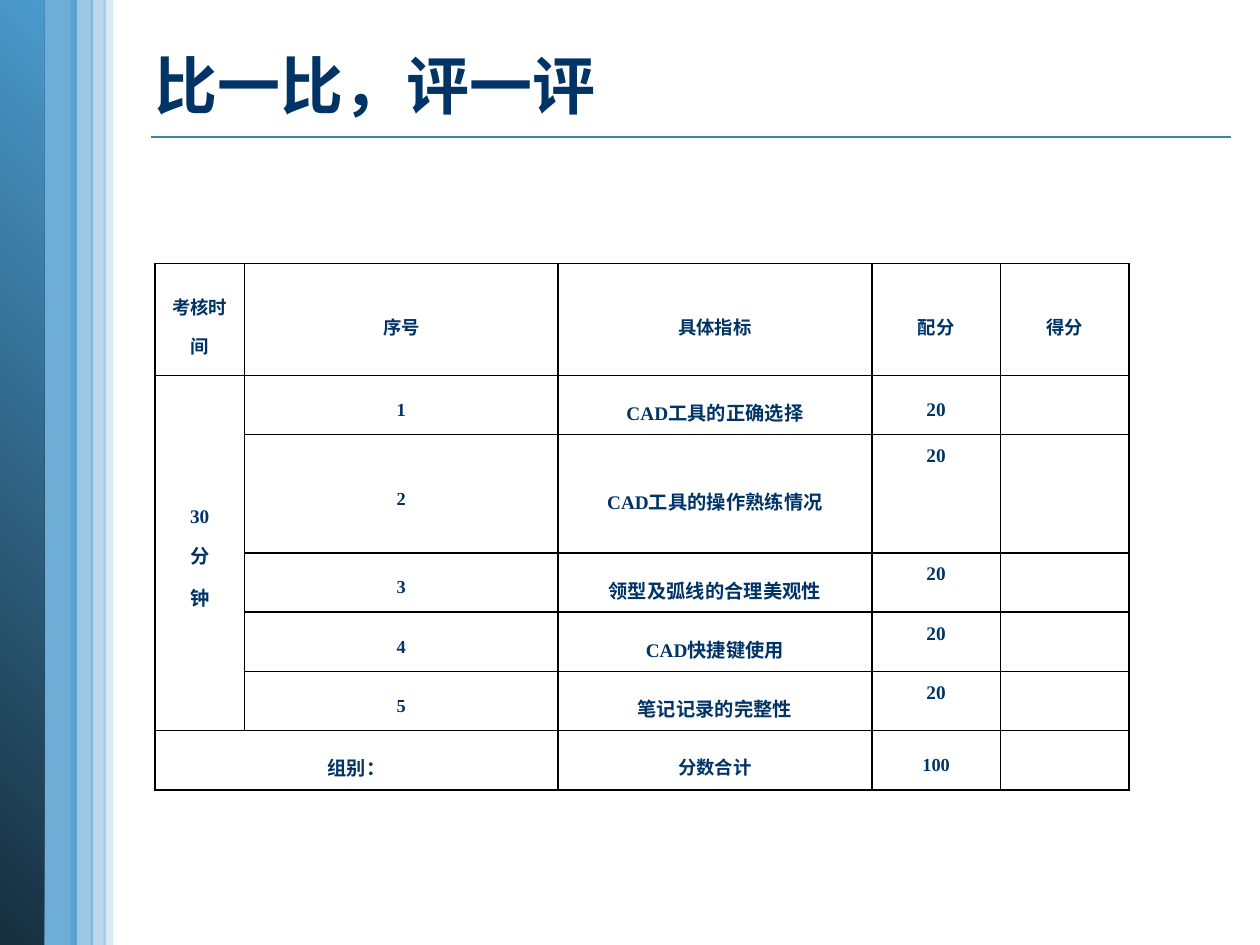
from dataclasses import dataclass
from lxml.etree import SubElement
from pptx import Presentation
from pptx.dml.color import RGBColor
from pptx.enum.shapes import MSO_CONNECTOR, MSO_SHAPE
from pptx.enum.text import MSO_ANCHOR, PP_ALIGN
from pptx.oxml.ns import qn
from pptx.util import Inches, Pt


@dataclass(frozen=True)
class Theme:
    ink: str = "003366"
    sky: str = "4A9ACC"
    deep: str = "162E3D"
    rule: str = "4582A7"
    grid: str = "000000"
    paper: str = "FFFFFF"
    head: float = 36
    body: float = 11
    small: float = 10.5
    sans: str = "Arial"
    serif: str = "Times New Roman"


THEME = Theme()

# Left, width and opacity of the stripes
BACK = [(0.3, 0.31, 80)]
FRONT = [(0.82, 0.08, 20), (0.56, 0.18, 54), (0.72, 0.12, 37)]

COLS = [0.71, 2.49, 2.49, 1.02, 1.02]
ROWS = [0.89, 0.47, 0.94, 0.47, 0.47, 0.47, 0.47]
HEADS = ["考核时间", "序号", "具体指标", "配分", "得分"]
GOALS = ["CAD工具的正确选择", "CAD工具的操作熟练情况", "领型及弧线的合理美观性",
         "CAD快捷键使用", "笔记记录的完整性"]


def rgb(code):
    return RGBColor.from_string(code)


def apply(item, form):
    for key, value in form.items():
        setattr(item, key, value)


def style(para, size, face):
    apply(para.font, {"size": Pt(size), "name": face, "bold": True})
    para.font.color.rgb = rgb(THEME.ink)


def add_bar(slide, left, width):
    bar = slide.shapes.add_shape(MSO_SHAPE.RECTANGLE, Inches(left), 0,
                                 Inches(width), Inches(7.5))
    bar.shadow.inherit = False
    bar.line.fill.background()
    return bar


def add_stripe(slide, left, width, alpha):
    bar = add_bar(slide, left, width)
    bar.fill.solid()
    bar.fill.fore_color.rgb = rgb(THEME.sky)
    tint = bar.fill._xPr.find(qn("a:solidFill"))[0]
    SubElement(tint, qn("a:alpha"), val=str(alpha * 1000))


def add_fade(slide):
    bar = add_bar(slide, 0, 0.35)
    bar.fill.gradient()
    bar.fill.gradient_angle = 45
    for stop, code in zip(bar.fill.gradient_stops, (THEME.deep, THEME.sky)):
        stop.color.rgb = rgb(code)


def add_rule(slide):
    line = slide.shapes.add_connector(MSO_CONNECTOR.STRAIGHT, Inches(1.2),
                                      Inches(1.09), Inches(9.77), Inches(1.09))
    line.line.color.rgb = rgb(THEME.rule)
    line.line.width = Pt(1)
    SubElement(line._element.spPr, qn("a:effectLst"))


def add_title(slide, text):
    box = slide.shapes.add_textbox(Inches(1.13), Inches(0.37),
                                   Inches(8.7), Inches(1.11))
    frame = box.text_frame
    apply(frame, {"word_wrap": True, "margin_top": 0, "text": text,
                  "vertical_anchor": MSO_ANCHOR.TOP})
    style(frame.paragraphs[0], THEME.head, THEME.sans)


def add_edges(cell):
    props = cell._tc.get_or_add_tcPr()
    for side in ("lnL", "lnR", "lnT", "lnB"):
        edge = SubElement(props, qn(f"a:{side}"), w=str(Pt(1)))
        fill = SubElement(edge, qn("a:solidFill"))
        SubElement(fill, qn("a:srgbClr"), val=THEME.grid)


def fill_cell(cell, text, size, anchor):
    apply(cell, {"margin_left": Inches(0.07), "margin_right": Inches(0.07),
                 "margin_top": 0, "margin_bottom": 0,
                 "vertical_anchor": anchor})
    cell.text_frame.text = text
    for para in cell.text_frame.paragraphs:
        apply(para, {"alignment": PP_ALIGN.CENTER, "line_spacing": 1.5})
        style(para, size, THEME.serif)


def add_table(slide):
    shape = slide.shapes.add_table(len(ROWS), len(COLS), Inches(1.23),
                                   Inches(2.09), Inches(sum(COLS)),
                                   Inches(sum(ROWS)))
    table = shape.table
    apply(table, {"first_row": False, "horz_banding": False})
    for col, width in zip(table.columns, COLS):
        col.width = Inches(width)
    for row, height in zip(table.rows, ROWS):
        row.height = Inches(height)
    for cell in table.iter_cells():
        add_edges(cell)
        cell.fill.solid()
        cell.fill.fore_color.rgb = rgb(THEME.paper)

    # Merged cells
    table.cell(1, 0).merge(table.cell(5, 0))
    table.cell(6, 0).merge(table.cell(6, 1))

    # Wording
    data = [HEADS]
    data += [["", str(num), goal, "20", ""]
             for num, goal in enumerate(GOALS, 1)]
    data += [["组别：", "", "分数合计", "100", ""]]
    data[1][0] = "30\n分\n钟"
    last = len(data) - 1
    for r, row in enumerate(data):
        for c, text in enumerate(row):
            if not text:
                continue
            plain = r == 0 or c == 1 or (r == last and c > 0)
            high = c == 3 and 1 < r < last
            fill_cell(table.cell(r, c), text,
                      THEME.small if plain else THEME.body,
                      MSO_ANCHOR.TOP if high else MSO_ANCHOR.MIDDLE)


def main():
    deck = Presentation()
    apply(deck, {"slide_width": Inches(10), "slide_height": Inches(7.5)})
    slide = deck.slides.add_slide(deck.slide_layouts[6])

    # Side band and rule
    add_rule(slide)
    for stripe in BACK:
        add_stripe(slide, *stripe)
    add_fade(slide)
    for stripe in FRONT:
        add_stripe(slide, *stripe)

    # Title and score table
    add_title(slide, "比一比，评一评")
    add_table(slide)
    deck.save("out.pptx")


if __name__ == "__main__":
    main()
